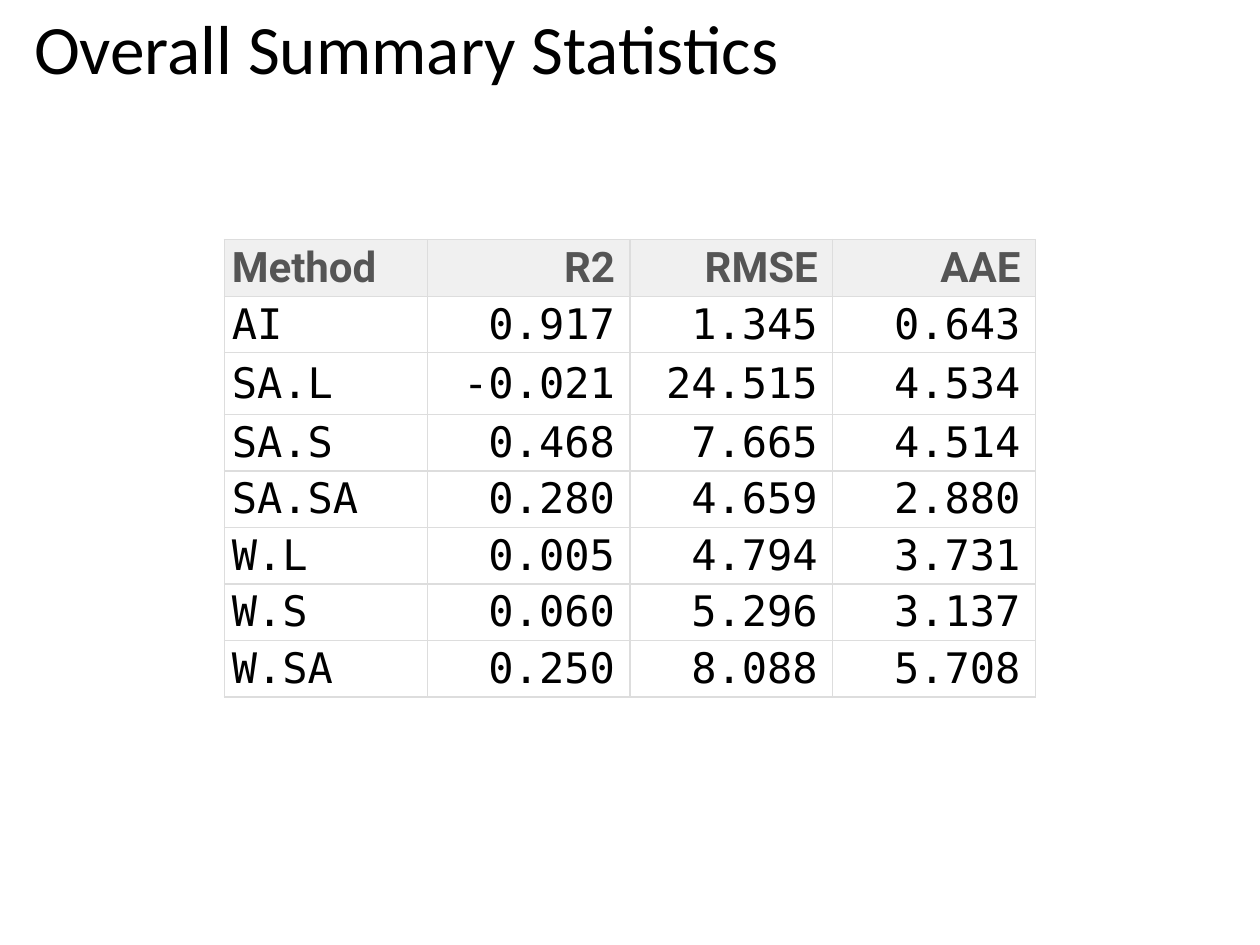
from dataclasses import dataclass

from lxml.etree import SubElement
from pptx import Presentation
from pptx.dml.color import RGBColor
from pptx.enum.text import MSO_ANCHOR as Anchor, MSO_AUTO_SIZE as AutoSize, PP_ALIGN as Align
from pptx.oxml.ns import qn
from pptx.util import Inches, Pt

TITLE = "Overall Summary Statistics"
HEADER = ("Method", "R2", "RMSE", "AAE")
RESULTS = [
    ("AI", "0.917", "1.345", "0.643"),
    ("SA.L", "-0.021", "24.515", "4.534"),
    ("SA.S", "0.468", "7.665", "4.514"),
    ("SA.SA", "0.280", "4.659", "2.880"),
    ("W.L", "0.005", "4.794", "3.731"),
    ("W.S", "0.060", "5.296", "3.137"),
    ("W.SA", "0.250", "8.088", "5.708"),
]


@dataclass(frozen=True)
class Theme:
    text: str = "000000"
    header_text: str = "555555"
    header_fill: str = "F0F0F0"
    border: str = "DDDDDD"
    border_width: float = 0.75
    title_size: float = 39.6
    table_size: float = 24


THEME = Theme()
SLIDE_WIDTH, SLIDE_HEIGHT = 10, 7.5
TITLE_BOX = {"left": 0.17, "top": 0, "width": 8.83, "height": SLIDE_HEIGHT / 10}
TABLE_TOP, COLUMN_WIDTH = 1.9, 1.61
ROW_HEIGHT, SPECIAL_HEIGHTS = 0.34, {0: 0.19, 2: 0.49}
CELL_MARGINS = {"margin_left": 0.06, "margin_top": 0.03,
                "margin_right": 0.12, "margin_bottom": 0.03}

TITLE_FONT = {"name": "Calibri", "size": Pt(THEME.title_size), "bold": False}
HEADER_FONT = {"name": "Roboto", "size": Pt(THEME.table_size), "bold": True}
BODY_FONT = {"name": "DejaVu Sans Mono", "size": Pt(THEME.table_size), "bold": False}


def set_attributes(target, values):
    for name, value in values.items():
        setattr(target, name, value)


def in_inches(values):
    return {name: Inches(value) for name, value in values.items()}


def format_paragraph(paragraph, font, color, alignment):
    paragraph.alignment = alignment
    set_attributes(paragraph.font, font)
    paragraph.font.color.rgb = RGBColor.from_string(color)


def add_borders(cell):
    properties = cell._tc.get_or_add_tcPr()
    for side in ("lnL", "lnR", "lnT", "lnB"):
        line = SubElement(properties, qn(f"a:{side}"), w=str(Pt(THEME.border_width)))
        fill = SubElement(line, qn("a:solidFill"))
        SubElement(fill, qn("a:srgbClr"), val=THEME.border)


def add_title(slide):
    title = slide.shapes.title
    set_attributes(title, in_inches(TITLE_BOX))
    frame = title.text_frame
    frame.text = TITLE
    set_attributes(frame, {"vertical_anchor": Anchor.MIDDLE, "word_wrap": True,
                           "auto_size": AutoSize.NONE})
    format_paragraph(frame.paragraphs[0], TITLE_FONT, THEME.text, Align.LEFT)


def fill_cell(cell, text, is_header, is_label):
    cell.text = text
    set_attributes(cell, in_inches(CELL_MARGINS))
    cell.vertical_anchor = Anchor.MIDDLE
    add_borders(cell)
    if is_header:
        cell.fill.solid()
        cell.fill.fore_color.rgb = RGBColor.from_string(THEME.header_fill)
    else:
        cell.fill.background()
    format_paragraph(cell.text_frame.paragraphs[0],
                     HEADER_FONT if is_header else BODY_FONT,
                     THEME.header_text if is_header else THEME.text,
                     Align.LEFT if is_label else Align.RIGHT)


def add_statistics_table(slide):
    rows = [HEADER, *RESULTS]
    heights = [SPECIAL_HEIGHTS.get(index, ROW_HEIGHT) for index in range(len(rows))]
    width = COLUMN_WIDTH * len(HEADER)
    table = slide.shapes.add_table(
        len(rows), len(HEADER), Inches((SLIDE_WIDTH - width) / 2), Inches(TABLE_TOP),
        Inches(width), Inches(sum(heights))).table
    table.horz_banding = False
    for column in table.columns:
        column.width = Inches(COLUMN_WIDTH)
    for row_index, (values, height) in enumerate(zip(rows, heights)):
        table.rows[row_index].height = Inches(height)
        for column_index, text in enumerate(values):
            fill_cell(table.cell(row_index, column_index), text,
                      row_index == 0, column_index == 0)


def main():
    presentation = Presentation()
    presentation.slide_width = Inches(SLIDE_WIDTH)
    presentation.slide_height = Inches(SLIDE_HEIGHT)
    slide = presentation.slides.add_slide(presentation.slide_layouts.get_by_name("Title Only"))
    add_title(slide)
    add_statistics_table(slide)
    presentation.save("out.pptx")


if __name__ == "__main__":
    main()
